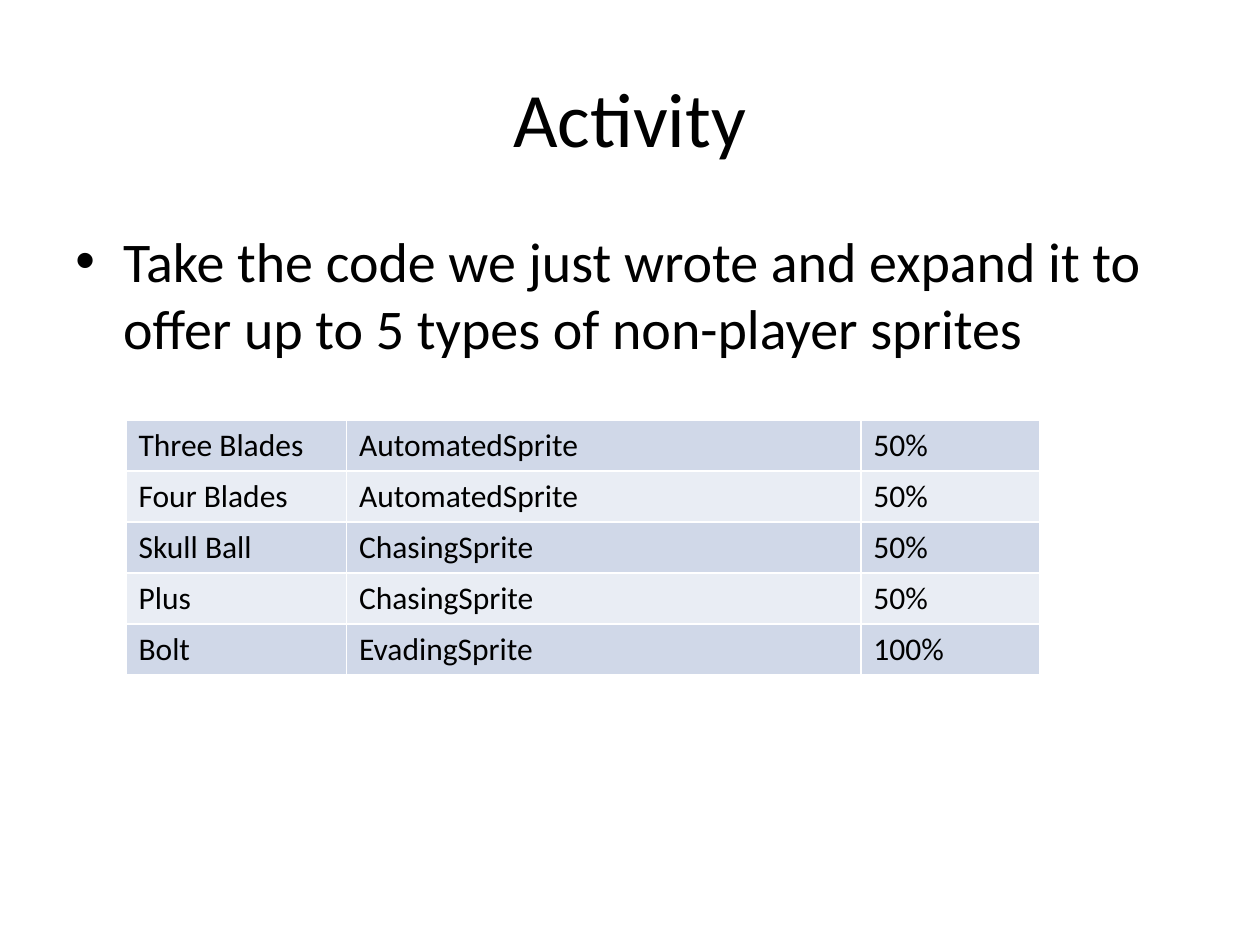
from dataclasses import dataclass

from lxml.etree import SubElement
from pptx import Presentation
from pptx.dml.color import RGBColor
from pptx.enum.text import MSO_ANCHOR, PP_ALIGN
from pptx.oxml.ns import qn
from pptx.util import Inches, Pt


@dataclass(frozen=True)
class Theme:
    font: str = "Calibri"
    text: str = "000000"
    border: str = "FFFFFF"
    bands: tuple = ("D0D8E8", "E9EDF4")
    title_size: int = 44
    body_size: int = 32
    table_size: int = 18
    border_width: int = 1
    bullet_indent: float = 0.38


def write_text(frame, text, *, theme, size, align=PP_ALIGN.LEFT, anchor=MSO_ANCHOR.TOP):
    frame.word_wrap = True
    frame.vertical_anchor = anchor
    para = frame.paragraphs[0]
    para.alignment = align
    span = para.add_run()
    span.text = text
    span.font.name = theme.font
    span.font.size = Pt(size)
    span.font.color.rgb = RGBColor.from_string(theme.text)
    return para


class SlideBuilder:
    unit = Inches(0.25)

    def __init__(self, deck, theme):
        self.theme = theme
        self.slide = deck.slides.add_slide(deck.slide_layouts[5])

    def grid(self, *lengths):
        return [round(length * self.unit) for length in lengths]

    def title(self, text, *area):
        box = self.slide.shapes.title
        box.left, box.top, box.width, box.height = self.grid(*area)
        write_text(box.text_frame, text, theme=self.theme, size=self.theme.title_size,
                   align=PP_ALIGN.CENTER, anchor=MSO_ANCHOR.MIDDLE)

    def bullet(self, text, *area):
        box = self.slide.shapes.add_textbox(*self.grid(*area))
        para = write_text(box.text_frame, text, theme=self.theme, size=self.theme.body_size)
        para.space_before = Pt(0.2 * self.theme.body_size)
        indent = Inches(self.theme.bullet_indent)
        properties = para._p.get_or_add_pPr()
        properties.set("marL", str(indent))
        properties.set("indent", str(-indent))
        SubElement(properties, qn("a:buFont"), typeface="Arial")
        SubElement(properties, qn("a:buChar"), char="•")

    def table(self, rows, left, top, widths, row_height):
        area = self.grid(left, top, sum(widths), row_height * len(rows))
        table = self.slide.shapes.add_table(len(rows), len(widths), *area).table
        table.first_row = table.horz_banding = False
        for column, width in zip(table.columns, self.grid(*widths)):
            column.width = width
        for row_index, values in enumerate(rows):
            table.rows[row_index].height = self.grid(row_height)[0]
            band = self.theme.bands[row_index % len(self.theme.bands)]
            for column_index, value in enumerate(values):
                self.cell(table.cell(row_index, column_index), value, band)

    def cell(self, cell, text, color):
        write_text(cell.text_frame, text, theme=self.theme, size=self.theme.table_size)
        properties = cell._tc.get_or_add_tcPr()
        for side in ("lnL", "lnR", "lnT", "lnB"):
            line = SubElement(properties, qn(f"a:{side}"), w=str(Pt(self.theme.border_width)))
            fill = SubElement(line, qn("a:solidFill"))
            SubElement(fill, qn("a:srgbClr"), val=self.theme.border)
        cell.fill.solid()
        cell.fill.fore_color.rgb = RGBColor.from_string(color)


def main():
    deck = Presentation()
    deck.slide_width, deck.slide_height = Inches(10), Inches(7.5)
    page = SlideBuilder(deck, Theme())
    page.title("Activity", 2, 1.2, 36, 5)
    page.bullet(
        "Take the code we just wrote and expand it to offer up to 5 types of non-player sprites",
        2, 7, 36, 19.8,
    )
    sprites = [
        ("Three Blades", "AutomatedSprite", "50%"),
        ("Four Blades", "AutomatedSprite", "50%"),
        ("Skull Ball", "ChasingSprite", "50%"),
        ("Plus", "ChasingSprite", "50%"),
        ("Bolt", "EvadingSprite", "100%"),
    ]
    page.table(sprites, left=4, top=13.33, widths=(7, 16.33, 5.67), row_height=1.62)
    deck.save("out.pptx")


if __name__ == "__main__":
    main()
